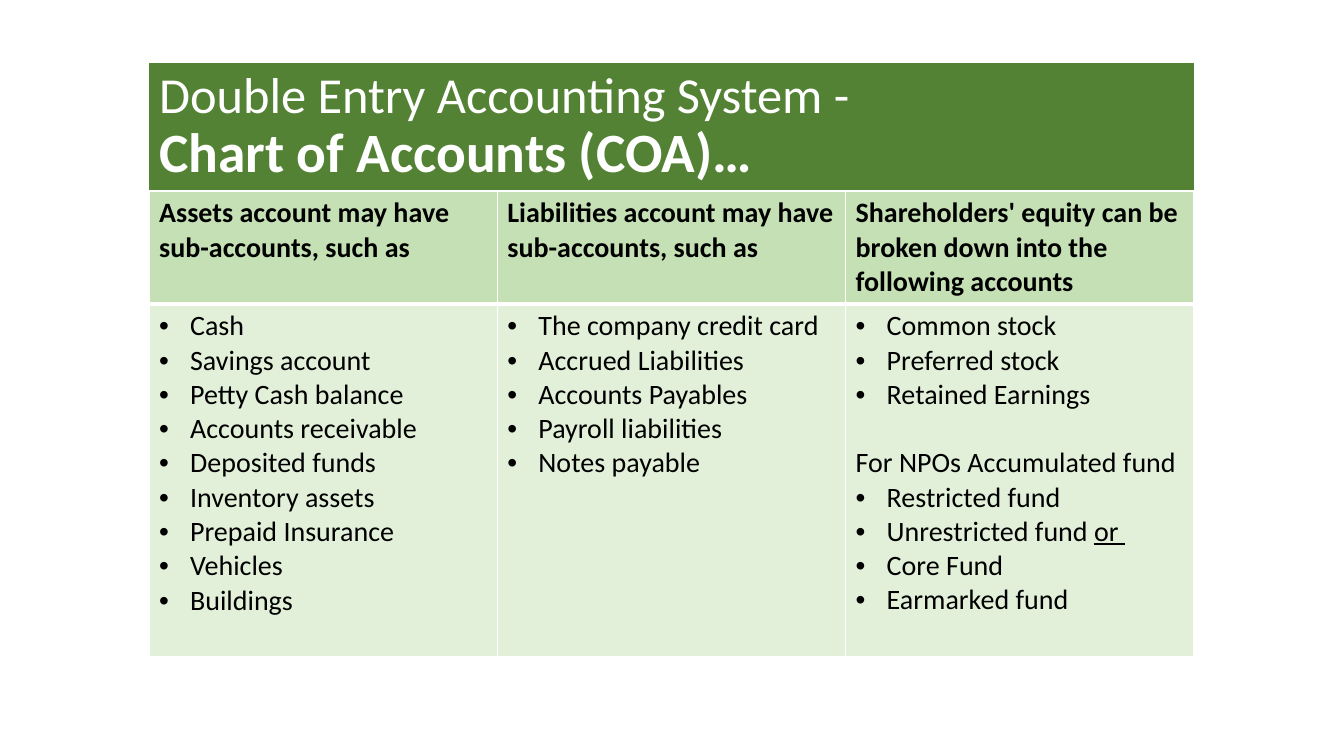
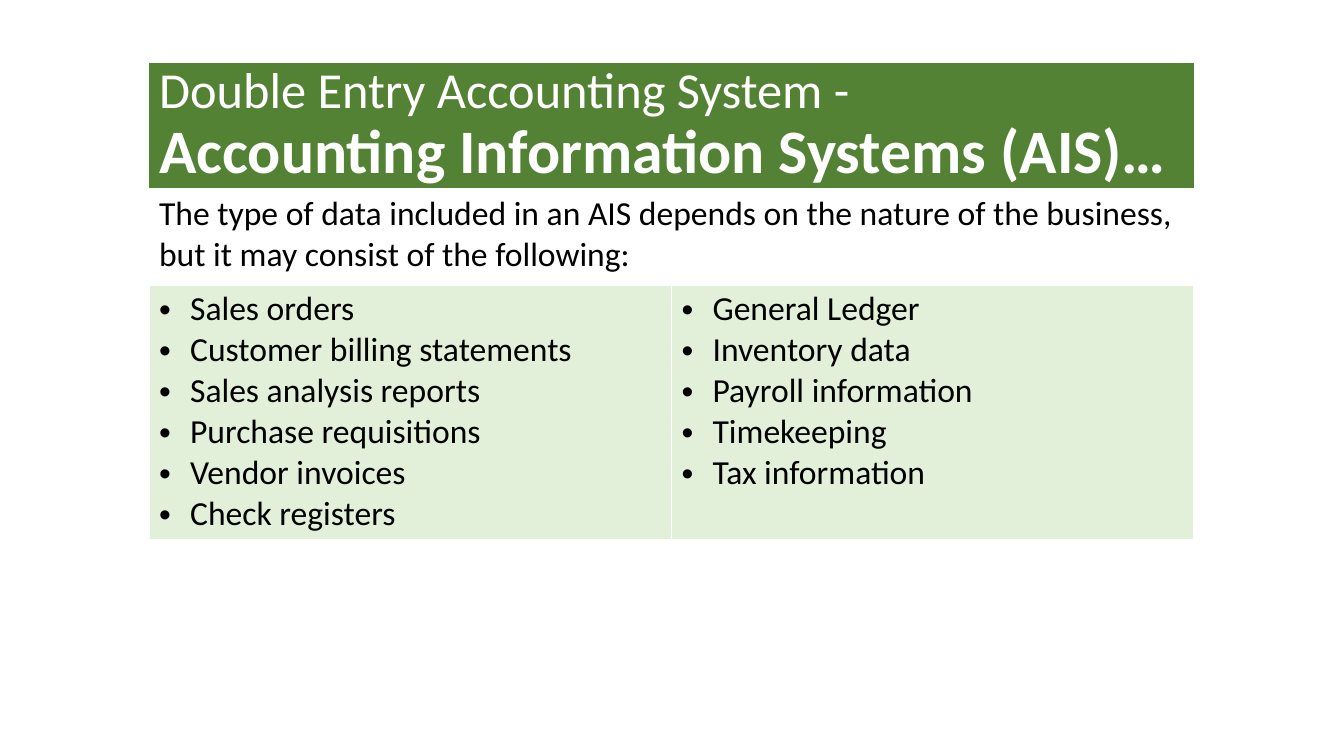
import dataclasses

import lxml.etree
import pptx
import pptx.dml.color
import pptx.enum.text
import pptx.oxml
import pptx.oxml.ns
import pptx.util

PX = 12192000 / 1344  # EMU in one px


def px(length):
    return pptx.util.Emu(round(length * PX))


@dataclasses.dataclass(frozen=True)
class Theme:
    font: str = "Calibri"
    band: str = "548235"
    heading_fill: str = "C5E0B4"
    body_fill: str = "E2F0D9"
    white: str = "FFFFFF"
    black: str = "000000"
    title_size: float = 36
    thin: float = 1
    thick: float = 3


@dataclasses.dataclass(frozen=True)
class Entry:
    text: str
    bullet: bool = True
    bold: bool = False
    underlined: str = ""
    before: float = 0


# Area shared by the title band and the tables
LEFT, TOP, WIDTH = 149, 63, 1045
INDENT = 31


def add_text(para, text, *, font, size, color, bold=False, underline=False):
    span = para.add_run()
    span.text = text
    span.font.name = font
    span.font.size = pptx.util.Pt(size)
    span.font.bold = bold
    span.font.underline = underline
    span.font.color.rgb = pptx.dml.color.RGBColor.from_string(color)
    return span


def add_child(parent, tag, **attributes):
    return lxml.etree.SubElement(parent, pptx.oxml.ns.qn(tag), attributes)


class Builder:
    def __init__(self, deck, theme):
        self.deck = deck
        self.theme = theme
        self.page = None

    def new_page(self):
        self.page = self.deck.slides.add_slide(self.deck.slide_layouts[5])

    def title(self, topic, *, size, height):
        box = self.page.shapes.title
        box.left, box.top, box.width, box.height = map(px, (LEFT, TOP, WIDTH, height))
        box.fill.solid()
        box.fill.fore_color.rgb = pptx.dml.color.RGBColor.from_string(self.theme.band)
        frame = box.text_frame
        frame.word_wrap = True
        frame.auto_size = pptx.enum.text.MSO_AUTO_SIZE.NONE
        frame.vertical_anchor = pptx.enum.text.MSO_ANCHOR.MIDDLE
        lines = (("Double Entry Accounting System -", self.theme.title_size, False),
                 (topic, size, True))
        for number, (text, line_size, bold) in enumerate(lines):
            para = frame.add_paragraph() if number else frame.paragraphs[0]
            para.alignment = pptx.enum.text.PP_ALIGN.LEFT
            para.line_spacing = 0.9
            para.space_before = pptx.util.Pt(0)
            add_text(para, text, font=self.theme.font, size=line_size,
                     color=self.theme.white, bold=bold)

    def table(self, rows, *, top, heights, fills, size):
        columns = len(rows[-1])
        grid = self.page.shapes.add_table(
            len(rows), columns, px(LEFT), px(top), px(WIDTH), px(sum(heights))).table
        grid.first_row = grid.horz_banding = False
        for row, height in zip(grid.rows, heights):
            row.height = px(height)
        for number, (entries_by_cell, fill) in enumerate(zip(rows, fills)):
            for column in range(columns):
                cell = grid.cell(number, column)
                self.cell_style(cell, fill, heading=number == 0)
                if column < len(entries_by_cell):
                    self.entries(cell.text_frame, entries_by_cell[column], size)
            # A row with one cell spans the whole table
            if len(entries_by_cell) == 1:
                grid.cell(number, 0).merge(grid.cell(number, columns - 1))

    def cell_style(self, cell, fill, *, heading):
        properties = cell._tc.get_or_add_tcPr()
        thick_edge = "a:lnB" if heading else "a:lnT"
        for edge in ("a:lnL", "a:lnR", "a:lnT", "a:lnB"):
            weight = self.theme.thick if edge == thick_edge else self.theme.thin
            line = add_child(properties, edge, w=str(pptx.util.Pt(weight)))
            add_child(add_child(line, "a:solidFill"), "a:srgbClr", val=self.theme.white)
        cell.fill.solid()
        cell.fill.fore_color.rgb = pptx.dml.color.RGBColor.from_string(fill)

    def entries(self, frame, entries, size):
        style = dict(font=self.theme.font, size=size, color=self.theme.black)
        for number, entry in enumerate(entries):
            para = frame.add_paragraph() if number else frame.paragraphs[0]
            if entry.before:
                para.space_before = pptx.util.Pt(entry.before)
            if entry.bullet:
                self.bullet(para)
            add_text(para, entry.text, bold=entry.bold, **style)
            if entry.underlined:
                add_text(para, entry.underlined, underline=True, **style)

    def bullet(self, para):
        properties = para._p.get_or_add_pPr()
        properties.set("marL", str(px(INDENT)))
        properties.set("indent", str(-px(INDENT)))
        add_child(properties, "a:buFont", typeface="Arial")
        add_child(properties, "a:buChar", char="•")


def bullets(*texts):
    return [Entry(text) for text in texts]


def heading(text):
    return [Entry(text, bullet=False, bold=True)]


def chart_of_accounts(builder):
    theme = builder.theme
    builder.new_page()
    builder.title("Chart of Accounts (COA)…", size=39.6, height=128)
    headings = [
        heading("Assets account may have sub-accounts, such as"),
        heading("Liabilities account may have sub-accounts, such as"),
        heading("Shareholders' equity can be broken down into the following accounts"),
    ]
    assets = bullets("Cash", "Savings account", "Petty Cash balance",
                     "Accounts receivable", "Deposited funds", "Inventory assets",
                     "Prepaid Insurance", "Vehicles", "Buildings")
    liabilities = bullets("The company credit card", "Accrued Liabilities",
                          "Accounts Payables", "Payroll liabilities", "Notes payable")
    equity = [
        *bullets("Common stock", "Preferred stock", "Retained Earnings"),
        Entry("For NPOs Accumulated fund", bullet=False, before=24.4),
        Entry("Restricted fund"),
        Entry("Unrestricted fund ", underlined="or "),
        *bullets("Core Fund", "Earmarked fund"),
    ]
    builder.table([headings, [assets, liabilities, equity]], top=191,
                  heights=(113, 353), fills=(theme.heading_fill, theme.body_fill), size=20)


def information_systems(builder):
    theme = builder.theme
    builder.new_page()
    builder.title("Accounting Information Systems (AIS)…", size=44.1, height=126)
    introduction = [Entry("The type of data included in an AIS depends on the nature of "
                          "the business, but it may consist of the following:",
                          bullet=False)]
    sales = bullets("Sales orders", "Customer billing statements",
                    "Sales analysis reports", "Purchase requisitions",
                    "Vendor invoices", "Check registers")
    records = bullets("General Ledger", "Inventory data", "Payroll information",
                      "Timekeeping", "Tax information")
    builder.table([[introduction], [sales, records]], top=189,
                  heights=(95, 253), fills=(theme.white, theme.body_fill), size=24)


def main():
    deck = pptx.Presentation()
    deck.slide_width, deck.slide_height = px(1344), px(756)
    builder = Builder(deck, Theme())
    chart_of_accounts(builder)
    information_systems(builder)
    deck.save("out.pptx")


if __name__ == "__main__":
    main()
